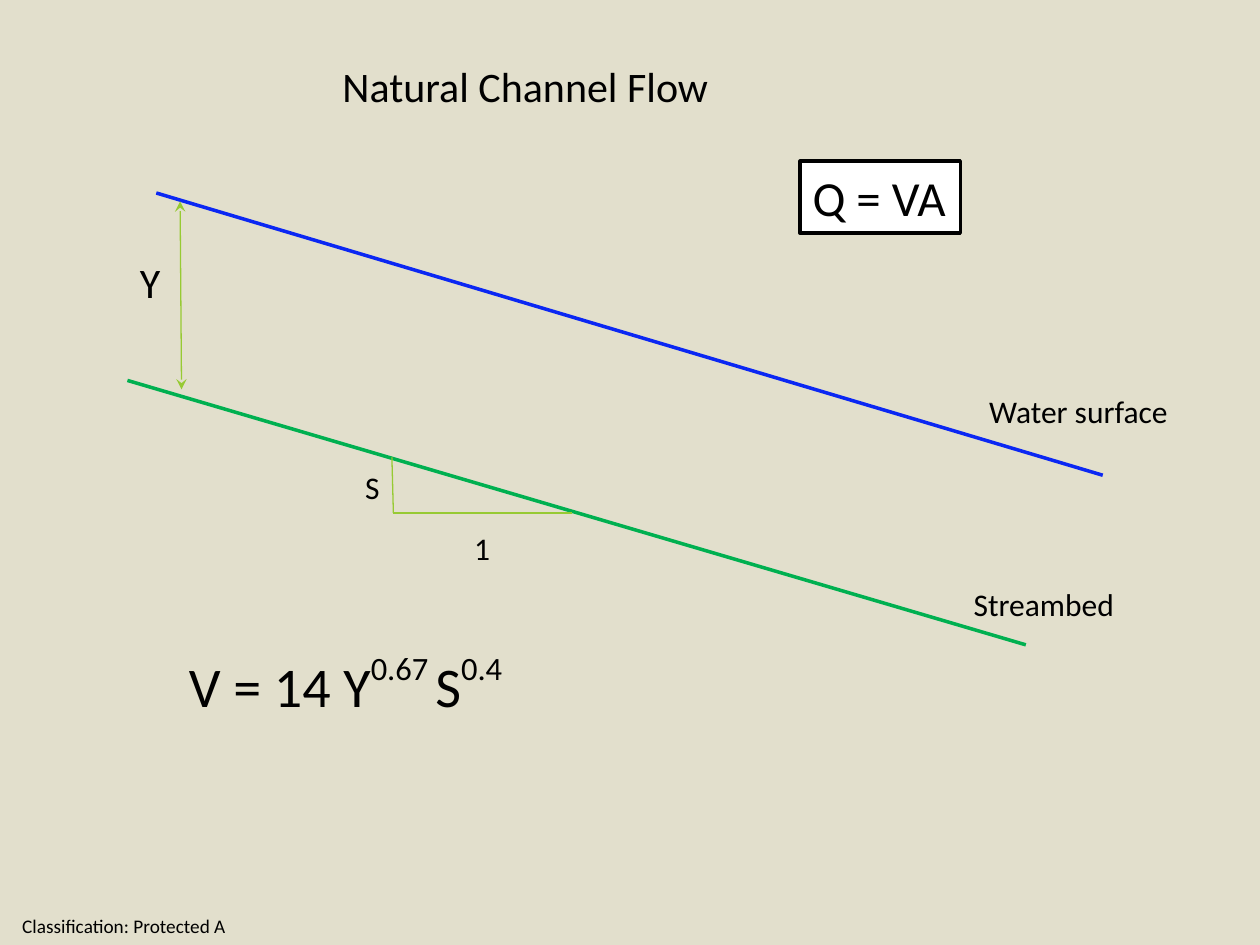
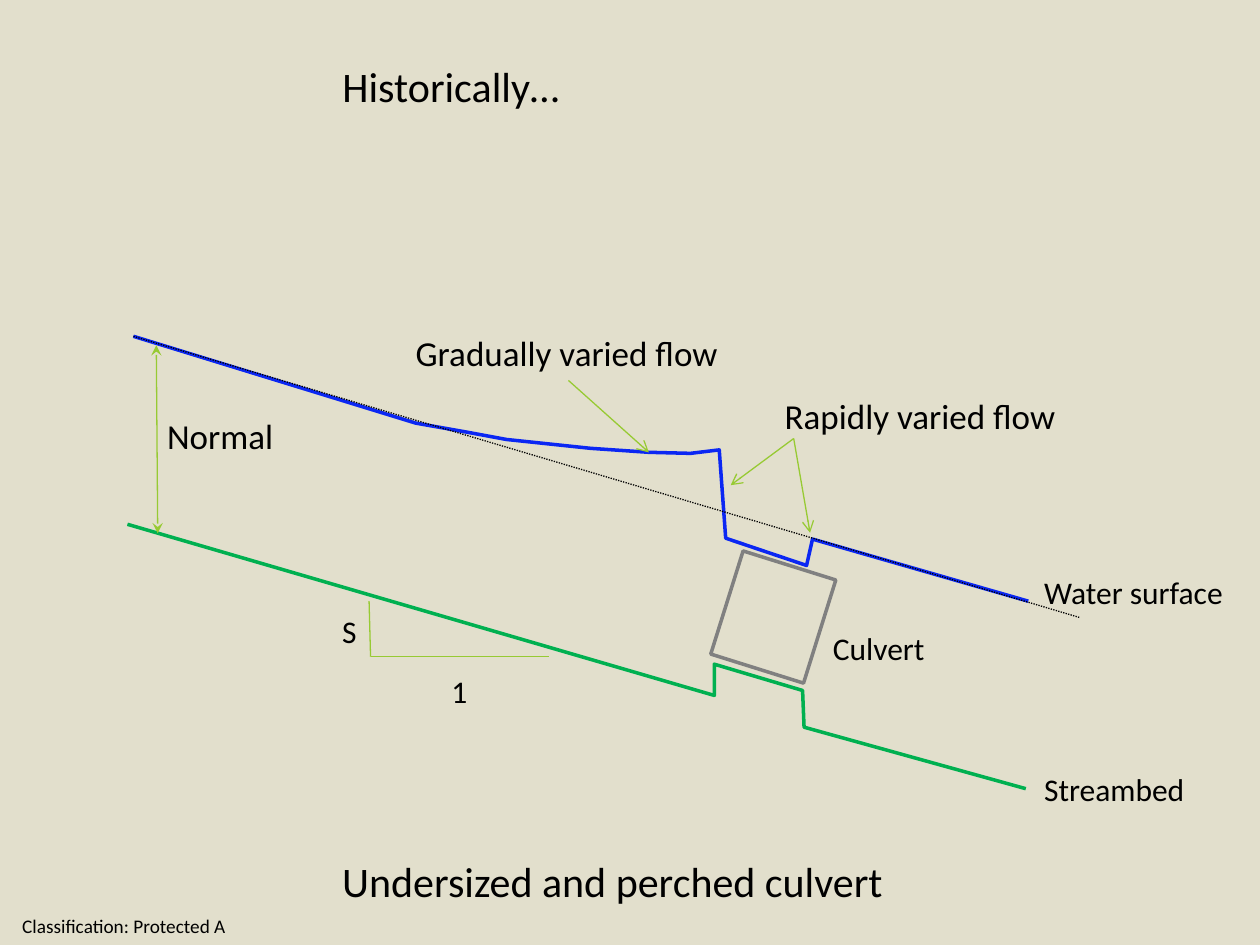
from dataclasses import dataclass

from lxml.etree import SubElement
from pptx import Presentation
from pptx.dml.color import RGBColor
from pptx.enum.dml import MSO_LINE
from pptx.enum.shapes import MSO_CONNECTOR, MSO_SHAPE
from pptx.enum.text import MSO_ANCHOR, MSO_AUTO_SIZE, PP_ALIGN
from pptx.oxml.ns import qn
from pptx.util import Cm, Pt


@dataclass(frozen=True)
class Theme:
    """Colours, type sizes and line widths of the deck."""
    font: str = "Calibri"
    ground: str = "E2DFCC"
    ink: str = "000000"
    paper: str = "FFFFFF"
    water: str = "0B27F3"
    bed: str = "00B050"
    guide: str = "97CA33"
    culvert: str = "808080"
    footer: int = 11
    label: int = 18
    note: int = 20
    title: int = 24
    flow: int = 28
    formula: int = 32
    thin: float = 0.75
    thick: float = 2


T = Theme()
TITLE_LEFT = 6.65


def rgb(color):
    """Turn a hex string into a colour."""
    return RGBColor.from_string(color)


def set_line(line, color, width):
    """Colour and size an outline."""
    line.color.rgb = rgb(color)
    line.width = Pt(width)


def write(tf, *parts, size=T.label, color=T.ink, align=PP_ALIGN.LEFT,
          anchor=MSO_ANCHOR.TOP):
    """Write one unwrapped paragraph; a part starting with ^ is raised."""
    tf.word_wrap = False
    tf.auto_size = MSO_AUTO_SIZE.SHAPE_TO_FIT_TEXT
    tf.vertical_anchor = anchor
    p = tf.paragraphs[0]
    p.alignment = align
    for part in parts:
        r = p.add_run()
        r.text = part.lstrip("^")
        r.font.name = T.font
        r.font.size = Pt(size)
        r.font.color.rgb = rgb(color)
        if part.startswith("^"):
            r.font._element.set("baseline", "50000")


def line_height(size):
    """Give the height in cm of a one-line box."""
    return round(size * 0.043 + 0.25, 2)


def add_label(s, x, y, w, *parts, size=T.label):
    """Add a one-line text box."""
    sp = s.shapes.add_textbox(Cm(x), Cm(y), Cm(w), Cm(line_height(size)))
    write(sp.text_frame, *parts, size=size)


def add_rect(s, x, y, w, h, color, fill=None, rotation=0):
    """Add an outlined rectangle."""
    sp = s.shapes.add_shape(MSO_SHAPE.RECTANGLE, Cm(x), Cm(y), Cm(w), Cm(h))
    sp.shadow.inherit = False
    sp.rotation = rotation
    set_line(sp.line, color, T.thick)
    if fill:
        sp.fill.solid()
        sp.fill.fore_color.rgb = rgb(fill)
    else:
        sp.fill.background()
    return sp


def add_line(s, start, end, color=T.guide, width=T.thin, dash=None,
             head=None, tail=None):
    """Add a straight line with optional dash and arrowheads."""
    ends = [Cm(v) for v in (*start, *end)]
    cx = s.shapes.add_connector(MSO_CONNECTOR.STRAIGHT, *ends)
    set_line(cx.line, color, width)
    if dash:
        cx.line.dash_style = dash
    ln = cx.line._get_or_add_ln()
    for tag, kind in (("a:headEnd", head), ("a:tailEnd", tail)):
        if kind:
            SubElement(ln, qn(tag), type=kind)
    SubElement(cx._element.spPr, qn("a:effectLst"))


def add_profile(s, points, color):
    """Add an open outline through the points."""
    first, *rest = [(Cm(x), Cm(y)) for x, y in points]
    fb = s.shapes.build_freeform(*first)
    fb.add_line_segments(rest, close=False)
    sp = fb.convert_to_shape()
    sp.shadow.inherit = False
    sp.fill.background()
    set_line(sp.line, color, T.thick)


def add_slope_mark(s, x, y):
    """Add the S-to-1 slope mark with its top at x, y."""
    corner = (x + 0.03, y + 1.12)
    add_line(s, (x, y), corner)
    add_line(s, corner, (x + 3.63, y + 1.12))
    add_label(s, x - 0.79, y + 0.09, 0.81, "S")
    add_label(s, x + 1.41, y + 1.31, 0.84, "1")


def add_depth_arrow(s, x, y):
    """Add the double arrow that spans the flow depth."""
    add_line(s, (x, y), (x + 0.03, y + 3.79), head="stealth", tail="stealth")


def add_footer(s):
    """Add the classification line."""
    sp = s.shapes.add_textbox(0, Cm(18.26), Cm(5), Cm(0.79))
    tf = sp.text_frame
    tf.margin_left = tf.margin_top = tf.margin_right = tf.margin_bottom = 0
    write(tf, "Classification: Protected A", size=T.footer,
          align=PP_ALIGN.CENTER, anchor=MSO_ANCHOR.MIDDLE)


def add_slide(prs, title, width):
    """Add a slide with its title and footer."""
    s = prs.slides.add_slide(prs.slide_layouts[5])
    sp = s.shapes.title
    sp.left, sp.top = Cm(TITLE_LEFT), Cm(1.09)
    sp.width, sp.height = Cm(width), Cm(line_height(T.title))
    write(sp.text_frame, title, size=T.title)
    add_footer(s)
    return s


def natural_flow(prs):
    """Build the slide on uniform flow in a channel."""
    s = add_slide(prs, "Natural Channel Flow", 8.15)
    add_profile(s, [(2.57, 7.67), (20.68, 13)], T.bed)
    add_slope_mark(s, 7.9, 9.22)
    add_line(s, (3.15, 3.89), (22.23, 9.58), T.water, T.thick)
    add_depth_arrow(s, 3.63, 4.06)
    add_label(s, 2.57, 5.05, 0.94, "Y", size=T.title)
    add_label(s, 3.56, 12.93, 7.24, "V = 14 Y", "^0.67 ", "S", "^0.4",
              size=T.formula)
    sp = add_rect(s, 16.13, 3.25, 3.23, 1.45, T.ink, fill=T.paper)
    write(sp.text_frame, "Q = VA", size=T.flow)
    add_label(s, 19.69, 7.77, 4.14, "Water surface")
    add_label(s, 19.38, 11.66, 3.38, "Streambed")


def perched_culvert(prs):
    """Build the slide on flow through an undersized culvert."""
    s = add_slide(prs, "Historically…", 4.93)
    add_profile(s, [(2.57, 10.57), (14.4, 14.02), (14.4, 13.39),
                    (16.18, 13.92), (16.21, 14.66), (20.68, 15.9)], T.bed)
    add_profile(s, [(2.69, 6.78), (8.38, 8.53), (9.4, 8.71), (10.21, 8.86),
                    (11.91, 9.04), (13.08, 9.12), (13.92, 9.14), (14.5, 9.07),
                    (14.63, 10.85), (16.26, 11.4), (16.38, 10.87),
                    (20.73, 12.12)], T.water)
    add_slope_mark(s, 7.44, 12.12)
    add_line(s, (2.69, 6.78), (21.77, 12.45), T.ink, dash=MSO_LINE.ROUND_DOT)
    add_depth_arrow(s, 3.15, 6.96)
    for x, y, w, text in ((3.12, 8.23, 2.67, "Normal"),
                          (15.57, 7.82, 6.02, "Rapidly varied flow"),
                          (8.13, 6.55, 6.65, "Gradually varied flow")):
        add_label(s, x, y, w, text, size=T.note)
    for start, end in (((16, 8.84), (16.33, 10.74)),
                       ((16, 8.84), (14.73, 9.78)),
                       ((11.46, 7.67), (13.08, 9.12))):
        add_line(s, start, end, tail="arrow")
    add_rect(s, 14.61, 11.35, 1.96, 2.18, T.culvert, rotation=17.4)
    add_label(s, TITLE_LEFT, 17.12, 11.53, "Undersized and perched culvert",
              size=T.title)
    add_label(s, 20.8, 11.43, 4.14, "Water surface")
    add_label(s, 20.8, 15.39, 3.38, "Streambed")
    add_label(s, 16.54, 12.55, 2.39, "Culvert")


def main():
    """Build and save the deck."""
    prs = Presentation()
    prs.slide_width, prs.slide_height = Cm(25.4), Cm(19.05)
    fill = prs.slide_master.background.fill
    fill.solid()
    fill.fore_color.rgb = rgb(T.ground)
    natural_flow(prs)
    perched_culvert(prs)
    prs.save("out.pptx")


if __name__ == "__main__":
    main()
